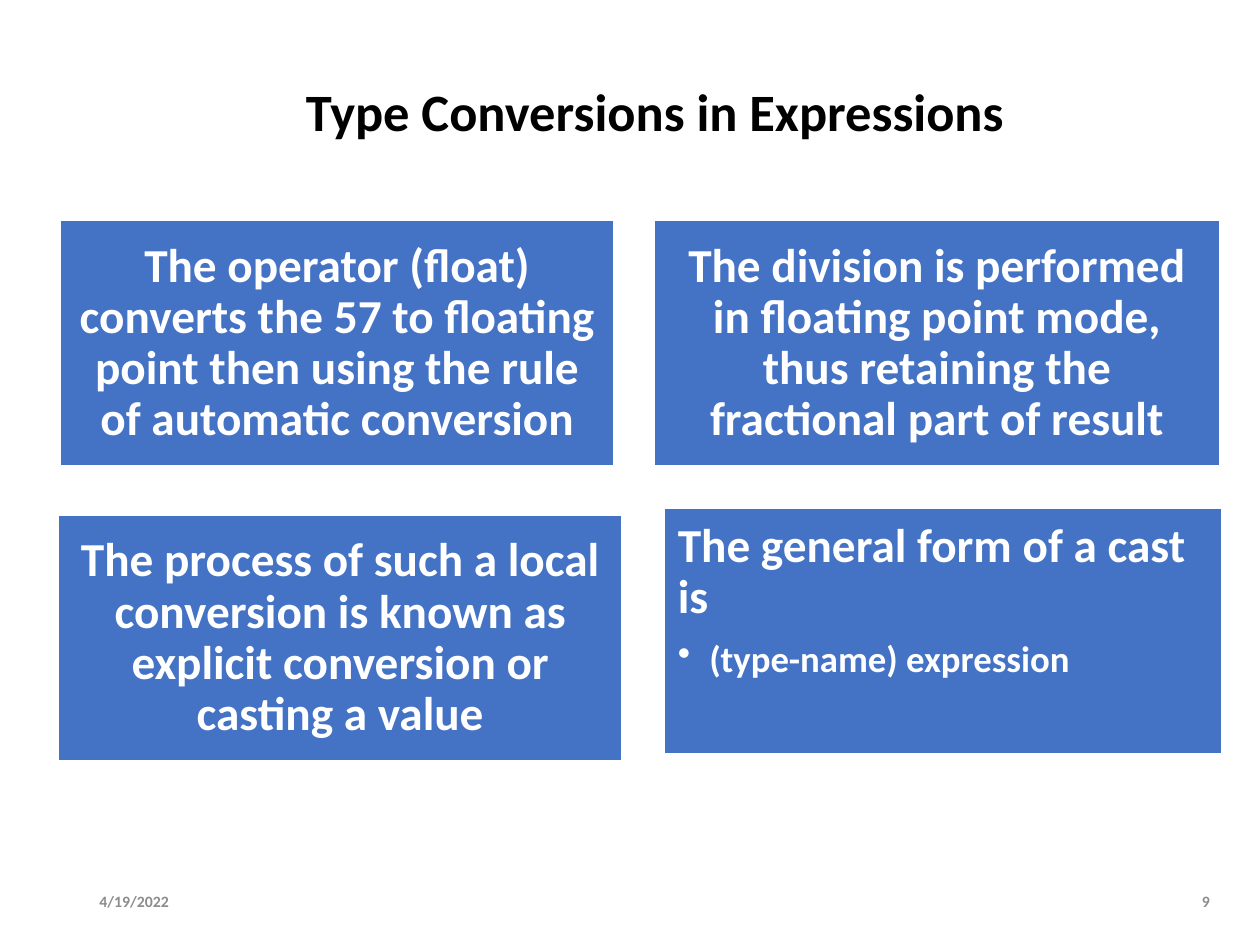
from dataclasses import dataclass

from lxml.etree import SubElement
from pptx import Presentation
from pptx.dml.color import RGBColor as Color
from pptx.enum.shapes import MSO_SHAPE as Shape
from pptx.enum.text import MSO_ANCHOR as Anchor, PP_ALIGN as Align
from pptx.oxml.ns import qn
from pptx.util import Inches, Pt


@dataclass(frozen=True)
class Theme:
    font: str = "Calibri"
    ink: str = "000000"
    muted: str = "8C8C8C"
    card: str = "4472C4"
    paper: str = "FFFFFF"
    title: int = 30
    body: int = 27
    detail: int = 21
    footer: int = 9


THEME = Theme()
CARD_HEIGHT = 1.95
CARDS = [
    (0.48, 1.75, 4.39, "The operator (float) converts the 57 to floating point "
                       "then using the rule of automatic conversion"),
    (5.19, 1.75, 4.49, "The division is performed in floating point mode, "
                       "thus retaining the fractional part of result"),
    (0.46, 4.09, 4.48, "The process of such a local conversion is known as "
                       "explicit conversion or casting a value"),
]


def write(para, text, size, color, align, line_spacing=0.9):
    para.alignment = align
    para.line_spacing = line_spacing
    para.space_before = Pt(0)
    span = para.add_run()
    span.text = text
    span.font.name = THEME.font
    span.font.size = Pt(size)
    span.font.bold = True
    span.font.color.rgb = Color.from_string(color)


def add_title(page, text):
    title = page.shapes.title
    title.left, title.top = Inches(0.69), Inches(0.56)
    title.width, title.height = Inches(9.02), Inches(0.69)
    title.text_frame.vertical_anchor = Anchor.MIDDLE
    write(title.text_frame.paragraphs[0], text, THEME.title, THEME.ink, Align.CENTER)


def add_footer(page, left, width, text, align):
    box = page.shapes.add_textbox(Inches(left), Inches(6.95), Inches(width), Inches(0.4))
    box.text_frame.word_wrap = True
    box.text_frame.vertical_anchor = Anchor.MIDDLE
    write(box.text_frame.paragraphs[0], text, THEME.footer, THEME.muted, align, 1.0)


def add_card(page, left, top, width, text, align=Align.CENTER, anchor=Anchor.MIDDLE):
    card = page.shapes.add_shape(
        Shape.RECTANGLE, Inches(left), Inches(top), Inches(width), Inches(CARD_HEIGHT))
    card.shadow.inherit = False
    card.fill.solid()
    card.fill.fore_color.rgb = Color.from_string(THEME.card)
    card.line.color.rgb = Color.from_string(THEME.paper)
    card.line.width = Pt(1)
    frame = card.text_frame
    frame.word_wrap = True
    frame.vertical_anchor = anchor
    frame.margin_left = frame.margin_right = Inches(0.11)
    frame.margin_top = frame.margin_bottom = Inches(0.11)
    write(frame.paragraphs[0], text, THEME.body, THEME.paper, align)
    return frame


def add_bullet(frame, text):
    frame.paragraphs[-1].space_after = Pt(9.5)
    para = frame.add_paragraph()
    para.level = 1
    properties = para._p.get_or_add_pPr()
    properties.set("marL", str(Inches(0.25)))
    properties.set("indent", str(-Inches(0.25)))
    SubElement(properties, qn("a:buChar")).set("char", "•")
    write(para, text, THEME.detail, THEME.paper, Align.LEFT)


def main():
    deck = Presentation()
    deck.slide_width, deck.slide_height = Inches(10), Inches(7.5)
    page = deck.slides.add_slide(deck.slide_layouts[5])
    add_title(page, "Type Conversions in Expressions")
    add_footer(page, 0.69, 0.95, "4/19/2022", Align.LEFT)
    add_footer(page, 9.31, 0.39, "9", Align.RIGHT)
    for card in CARDS:
        add_card(page, *card)
    cast = add_card(page, 5.27, 4.03, 4.43, "The general form of a cast is",
                    Align.LEFT, Anchor.TOP)
    add_bullet(cast, "(type-name) expression")
    deck.save("out.pptx")


if __name__ == "__main__":
    main()
